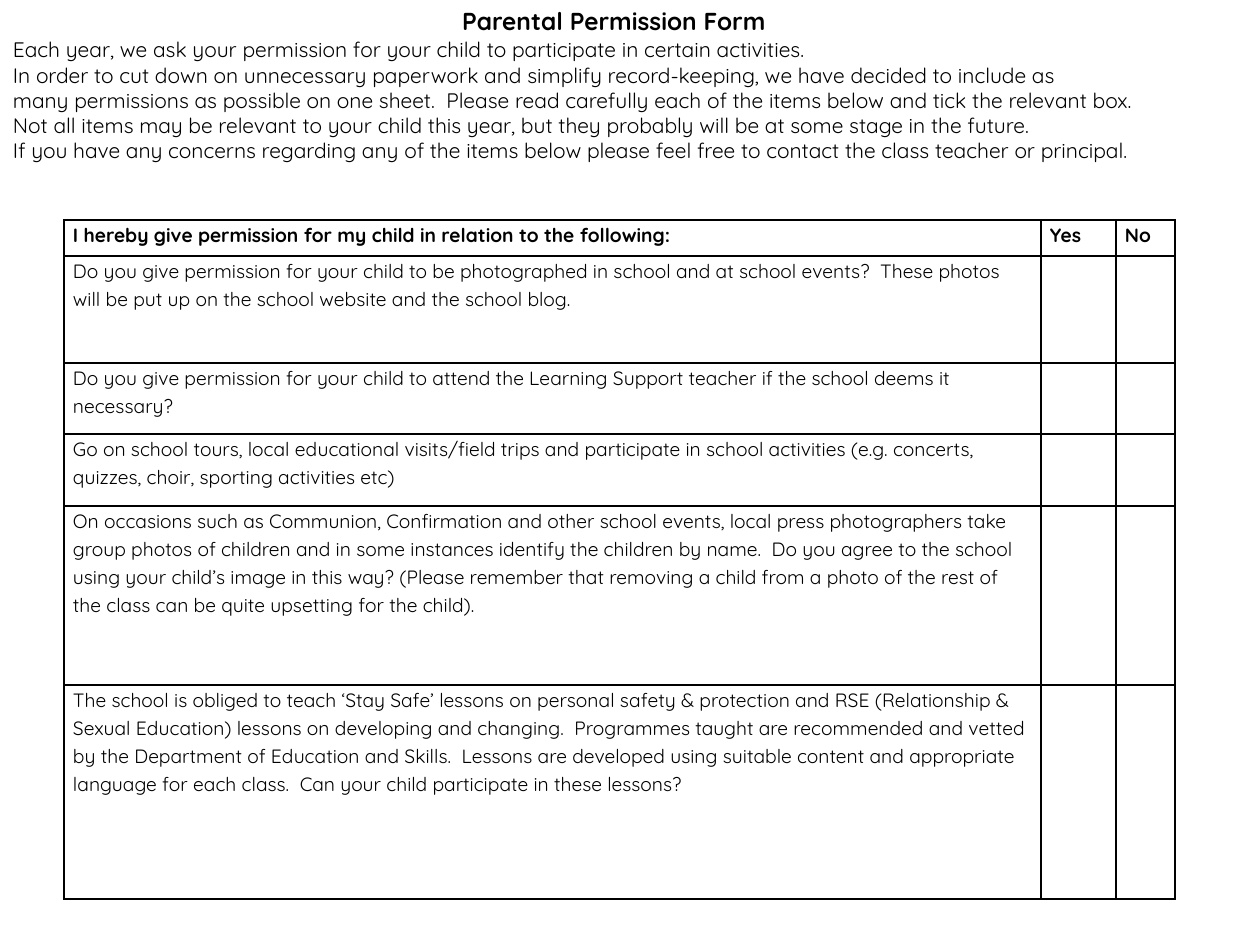
import pptx
import pptx.dml.color
import pptx.enum.text
import pptx.oxml
import pptx.oxml.ns
import pptx.util

SCALE = pptx.util.Inches(1) // 126
FONT = "Quicksand"
BLACK = pptx.dml.color.RGBColor(0x00, 0x00, 0x00)
WHITE = pptx.dml.color.RGBColor(0xFF, 0xFF, 0xFF)
BORDER_WIDTH = pptx.util.Pt(1)

TITLE = "Parental Permission Form"
INTRO = [
    "Each year, we ask your permission for your child to participate in certain activities.",
    "In order to cut down on unnecessary paperwork and simplify record-keeping, we have decided to include as",
    "many permissions as possible on one sheet.  Please read carefully each of the items below and tick the relevant box.",
    "Not all items may be relevant to your child this year, but they probably will be at some stage in the future.",
    "If you have any concerns regarding any of the items below please feel free to contact the class teacher or principal.",
]
HEADER = ["I hereby give permission for my child in relation to the following:", "Yes", "No"]
QUESTIONS = [
    "Do you give permission for your child to be photographed in school and at school events?  "
    "These photos will be put up on the school website and the school blog.",
    "Do you give permission for your child to attend the Learning Support teacher "
    "if the school deems it necessary?",
    "Go on school tours, local educational visits/field trips and participate in school activities "
    "(e.g. concerts, quizzes, choir, sporting activities etc)",
    "On occasions such as Communion, Confirmation and other school events, local press photographers "
    "take group photos of children and in some instances identify the children by name.  "
    "Do you agree to the school using your child’s image in this way? (Please remember that removing "
    "a child from a photo of the rest of the class can be quite upsetting for the child).",
    "The school is obliged to teach ‘Stay Safe’ lessons on personal safety & protection and RSE "
    "(Relationship & Sexual Education) lessons on developing and changing.  Programmes taught are "
    "recommended and vetted by the Department of Education and Skills.  Lessons are developed using "
    "suitable content and appropriate language for each class.  "
    "Can your child participate in these lessons?",
]
COLUMN_WIDTHS = [977, 75, 59]
ROW_HEIGHTS = [36, 107, 71, 72, 179, 214]


def px(length):
    return length * SCALE


def set_attributes(target, values):
    for name, value in values.items():
        setattr(target, name, value)


def write_paragraph(paragraph, text, size, bold=False, **layout):
    set_attributes(paragraph, layout)
    run = paragraph.add_run()
    run.text = text
    set_attributes(run.font, {"name": FONT, "size": pptx.util.Pt(size), "bold": bold})
    run.font.color.rgb = BLACK


def format_frame(frame, wrap):
    set_attributes(frame, {
        "word_wrap": wrap,
        "auto_size": pptx.enum.text.MSO_AUTO_SIZE.NONE,
        "vertical_anchor": pptx.enum.text.MSO_ANCHOR.TOP,
        "margin_left": px(13), "margin_right": px(13),
        "margin_top": 0, "margin_bottom": 0,
    })


def add_title(slide):
    title = slide.shapes.title
    set_attributes(title, {"left": 0, "top": px(6), "width": px(1228), "height": px(31)})
    format_frame(title.text_frame, True)
    write_paragraph(title.text_frame.paragraphs[0], TITLE, 14, True,
                    alignment=pptx.enum.text.PP_ALIGN.CENTER)


def add_intro(slide):
    box = slide.shapes.add_textbox(0, px(37), px(1228), px(171))
    frame = box.text_frame
    format_frame(frame, False)
    for index, line in enumerate(INTRO):
        paragraph = frame.add_paragraph() if index else frame.paragraphs[0]
        write_paragraph(paragraph, line, 12, alignment=pptx.enum.text.PP_ALIGN.LEFT)


def add_borders(cell):
    properties = cell._tc.get_or_add_tcPr()
    for position, side in enumerate(("lnL", "lnR", "lnT", "lnB")):
        border = pptx.oxml.parse_xml(
            f'<a:{side} {pptx.oxml.ns.nsdecls("a")} w="{BORDER_WIDTH}">'
            f'<a:solidFill><a:srgbClr val="{BLACK}"/></a:solidFill></a:{side}>')
        properties.insert(position, border)


def format_cell(cell, text, bold):
    cell.fill.solid()
    cell.fill.fore_color.rgb = WHITE
    set_attributes(cell, {"margin_left": px(9), "margin_right": px(9),
                          "margin_top": 0, "margin_bottom": 0})
    add_borders(cell)
    if text:
        write_paragraph(cell.text_frame.paragraphs[0], text, 11, bold, line_spacing=1.15)


def add_permission_table(slide):
    rows = [HEADER] + [[question, "", ""] for question in QUESTIONS]
    table = slide.shapes.add_table(len(rows), len(HEADER), px(64), px(220),
                                   px(sum(COLUMN_WIDTHS)), px(sum(ROW_HEIGHTS))).table
    set_attributes(table, {"first_row": False, "horz_banding": False})
    for column, width in zip(table.columns, COLUMN_WIDTHS):
        column.width = px(width)
    for row, height, texts in zip(table.rows, ROW_HEIGHTS, rows):
        row.height = px(height)
        for cell, text in zip(row.cells, texts):
            format_cell(cell, text, texts is HEADER)


def main():
    presentation = pptx.Presentation()
    set_attributes(presentation, {"slide_width": px(1260), "slide_height": px(945)})
    slide = presentation.slides.add_slide(presentation.slide_layouts[5])
    # Heading and explanation
    add_title(slide)
    add_intro(slide)
    # Permissions to tick
    add_permission_table(slide)
    presentation.save("out.pptx")


if __name__ == "__main__":
    main()
